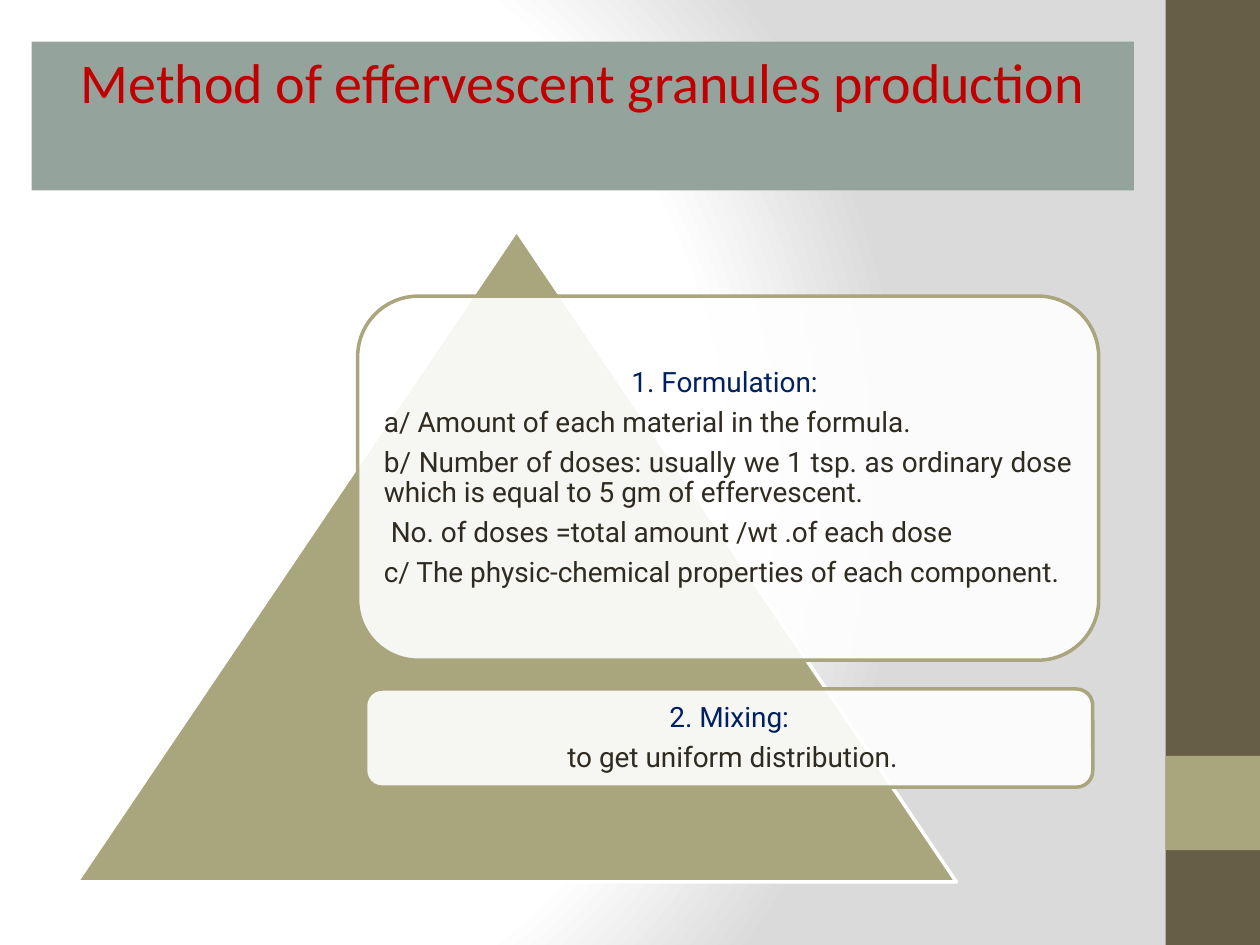
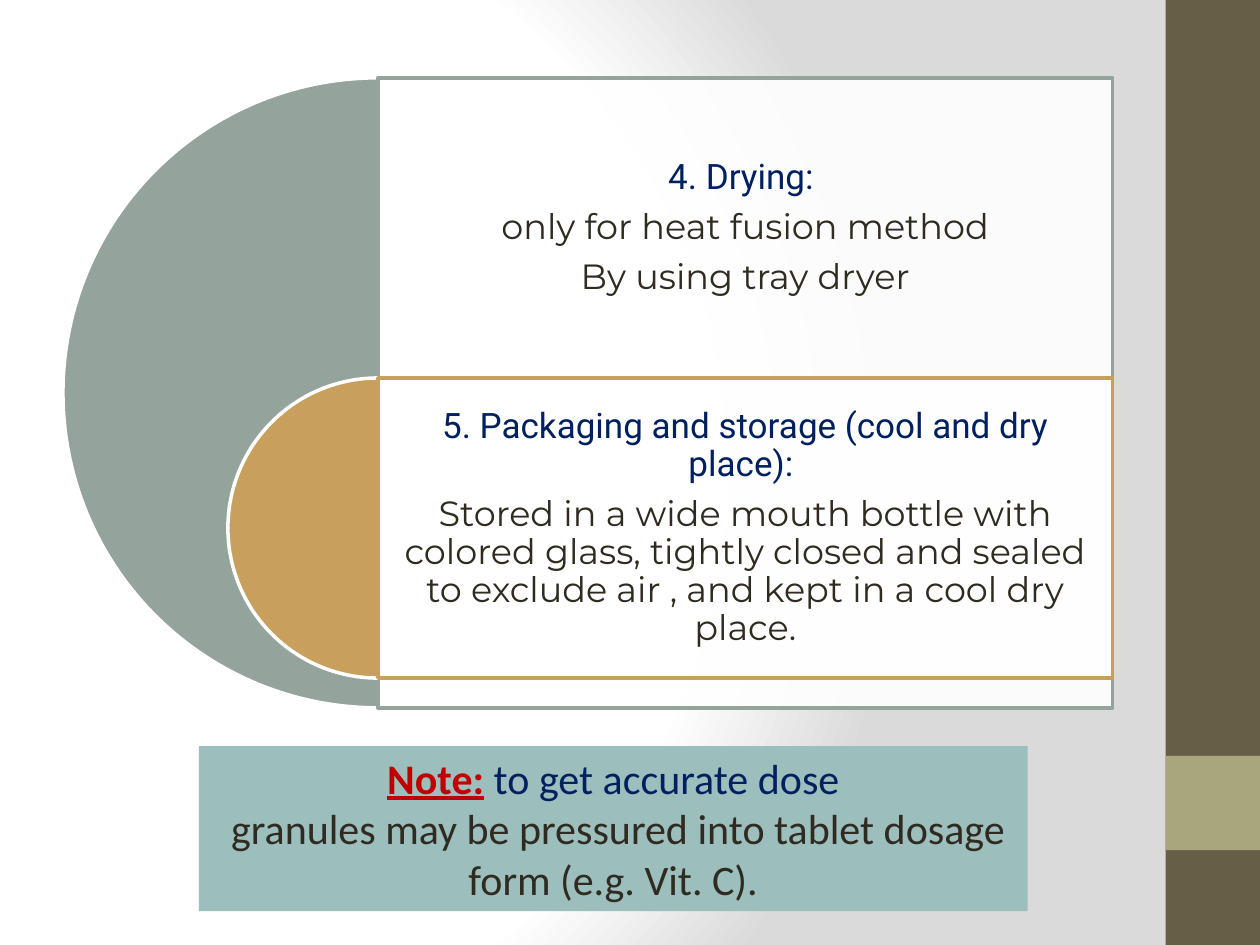
from dataclasses import dataclass
from typing import NamedTuple

from lxml import etree
from pptx import Presentation
from pptx import util as u
from pptx.dml import color as dml
from pptx.enum import shapes, text
from pptx.oxml import ns

COLORS = {
    "white": "FFFFFF", "grey": "DADADA", "brown": "675E47", "olive": "A9A57C",
    "sage": "95A39D", "ochre": "C89F5D", "teal": "9CBEBD",
    "red": "C00000", "navy": "002060", "ink": "2F2B20",
}
BODY, DISPLAY, TITLE = "Roboto", "Montserrat", "Calibri"
LEFT, CENTER, JUSTIFY = (text.PP_ALIGN.LEFT, text.PP_ALIGN.CENTER,
                         text.PP_ALIGN.JUSTIFY)
PRESET = shapes.MSO_SHAPE


class Frame(NamedTuple):
    """Left, top, width and height in centimetres."""
    left: float
    top: float
    width: float
    height: float

    def inset(self, gap: float) -> "Frame":
        return Frame(self.left + gap, self.top + gap,
                     self.width - 2 * gap, self.height - 2 * gap)

    def lengths(self) -> list:
        return [u.Cm(value) for value in self]


class Span(NamedTuple):
    text: str
    color: str = "ink"
    font: str = BODY
    strong: bool = False


@dataclass
class Line:
    spans: list
    align: int = CENTER


@dataclass
class Step:
    """A translucent card with its text area."""
    frame: Frame
    text_frame: Frame
    outline: str
    lines: list
    preset: int
    size: int
    margin: float


def rgb(name: str) -> dml.RGBColor:
    return dml.RGBColor.from_string(COLORS[name])


def add_block(slide, preset: int, frame: Frame, fill: str,
              outline: str = "", alpha: int = 100):
    box = slide.shapes.add_shape(preset, *frame.lengths())
    box.shadow.inherit = False
    box.fill.solid()
    box.fill.fore_color.rgb = rgb(fill)
    if alpha < 100:
        tint = box._element.spPr.find(".//" + ns.qn("a:srgbClr"))
        etree.SubElement(tint, ns.qn("a:alpha"), val=str(alpha * 1000))
    if outline:
        box.line.color.rgb = rgb(outline)
        box.line.width = u.Pt(2)
    else:
        box.line.fill.background()
    return box


def add_span(para, words: str, *, size: int, font: str, color: str,
             strong: bool = False) -> None:
    span = para.add_run()
    span.text = words
    span.font.size = u.Pt(size)
    span.font.name = font
    span.font.color.rgb = rgb(color)
    span.font.bold = strong
    span.font.underline = strong


def write_lines(box, lines: list, size: int, spaced: bool = False) -> None:
    frame = box.text_frame
    frame.word_wrap = True
    for index, line in enumerate(lines):
        para = frame.add_paragraph() if index else frame.paragraphs[0]
        para.alignment = line.align
        if spaced:
            para.line_spacing = 0.9
            para.space_after = u.Pt(0.35 * size)
        for span in line.spans:
            add_span(para, span.text, size=size, font=span.font,
                     color=span.color, strong=span.strong)


def add_step(slide, step: Step) -> None:
    add_block(slide, step.preset, step.frame, "white", step.outline, alpha=90)
    box = slide.shapes.add_textbox(*step.text_frame.lengths())
    frame = box.text_frame
    frame.vertical_anchor = text.MSO_ANCHOR.MIDDLE
    frame.margin_left = frame.margin_right = u.Cm(step.margin)
    frame.margin_top = frame.margin_bottom = u.Cm(step.margin)
    write_lines(box, step.lines, step.size, spaced=True)


def add_banner(slide, frame: Frame, fill: str, lines: list, size: int) -> None:
    box = add_block(slide, PRESET.RECTANGLE, frame, fill)
    box.text_frame.vertical_anchor = text.MSO_ANCHOR.TOP
    write_lines(box, lines, size)


def add_half_disc(slide, center_x: float, top: float, diameter: float,
                  fill: str) -> None:
    frame = Frame(center_x - diameter / 2, top, diameter, diameter)
    disc = add_block(slide, PRESET.PIE, frame, fill, "white")
    disc.adjustments[0], disc.adjustments[1] = 54, 162  # 90 and 270 degrees


def set_background(master) -> None:
    """Radial white-to-grey gradient behind every slide."""
    master.background.fill.gradient()
    gradient = master._element.find(".//" + ns.qn("a:gradFill"))
    for child in list(gradient):
        gradient.remove(child)
    stops = etree.SubElement(gradient, ns.qn("a:gsLst"))
    for percent, name in ((0, "white"), (75, "white"), (100, "grey")):
        stop = etree.SubElement(stops, ns.qn("a:gs"), pos=str(percent * 1000))
        etree.SubElement(stop, ns.qn("a:srgbClr"), val=COLORS[name])
    path = etree.SubElement(gradient, ns.qn("a:path"), path="circle")
    etree.SubElement(path, ns.qn("a:fillToRect"),
                     l="20000", t="50000", r="100000", b="50000")


def new_page(deck):
    page = deck.slides.add_slide(deck.slide_layouts[6])
    # Side band and its accent square
    add_block(page, PRESET.RECTANGLE, Frame(23.5, 0, 1.9, 19.05), "brown")
    add_block(page, PRESET.RECTANGLE, Frame(23.5, 15.24, 1.9, 1.9), "olive")
    return page


def heading(words: str) -> Line:
    return Line([Span(words, "navy")])


def build_method_page(deck) -> None:
    page = new_page(deck)
    add_block(page, PRESET.ISOSCELES_TRIANGLE,
              Frame(1.55, 4.65, 17.73, 13.13), "olive", "white")

    # Formulation and mixing cards
    formulation = [
        heading("1. Formulation: "),
        Line([Span("a/ Amount of each material in the formula.")], LEFT),
        Line([Span("b/ Number of doses: usually we 1 tsp. as ordinary dose "
                   "which is equal to 5 gm of effervescent.")], JUSTIFY),
        Line([Span(" No. of doses =total amount /wt .of each dose")], JUSTIFY),
        Line([Span("c/ The physic-chemical properties of each component.")],
             JUSTIFY),
    ]
    mixing = [heading("2. Mixing:"),
              Line([Span(" to get uniform distribution.")])]
    for frame, corner, lines in (
            (Frame(7.21, 5.97, 14.94, 7.34), 0.36, formulation),
            (Frame(7.37, 13.89, 14.66, 1.98), 0.1, mixing)):
        add_step(page, Step(frame, frame.inset(corner), "olive", lines,
                            PRESET.ROUNDED_RECTANGLE, 16, 0.17))

    add_banner(page, Frame(0.64, 0.84, 22.22, 3), "sage",
               [Line([Span("Method of effervescent granules production",
                           "red", TITLE)])], 32)


def build_storage_page(deck) -> None:
    page = new_page(deck)

    # Nested half discs, each with a card starting at its centre
    center_x, top, card_width, row_height = 7.62, 1.57, 14.81, 6.05
    drying = [heading("4. Drying: "),
              Line([Span("only for heat fusion method", font=DISPLAY)]),
              Line([Span("By using tray dryer", font=DISPLAY)])]
    storage = [heading("5. Packaging and storage (cool and dry place): "),
               Line([Span("Stored in a wide mouth bottle with colored glass, "
                          "tightly closed and sealed to exclude air , and "
                          "kept in a cool dry place.", font=DISPLAY)])]
    for row, (diameter, color, lines) in enumerate(
            ((12.7, "sage", drying), (row_height, "ochre", storage))):
        row_top = top + row * row_height
        add_half_disc(page, center_x, row_top, diameter, color)
        add_step(page, Step(Frame(center_x, row_top, card_width, diameter),
                            Frame(center_x, row_top, card_width, row_height),
                            color, lines, PRESET.RECTANGLE, 20, 0.2))

    # Dose note
    add_banner(page, Frame(4.01, 15.04, 16.71, 3.33), "teal", [
        Line([Span("Note:", "red", TITLE, True), Span(" ", font=TITLE),
              Span("to get accurate dose", "navy", TITLE)]),
        Line([Span(" granules may be pressured into tablet dosage form "
                   "(e.g. Vit. C).", font=TITLE)]),
    ], 24)


def main() -> None:
    deck = Presentation()
    deck.slide_width, deck.slide_height = u.Cm(25.4), u.Cm(19.05)
    set_background(deck.slide_master)
    build_method_page(deck)
    build_storage_page(deck)
    deck.save("out.pptx")


if __name__ == "__main__":
    main()
